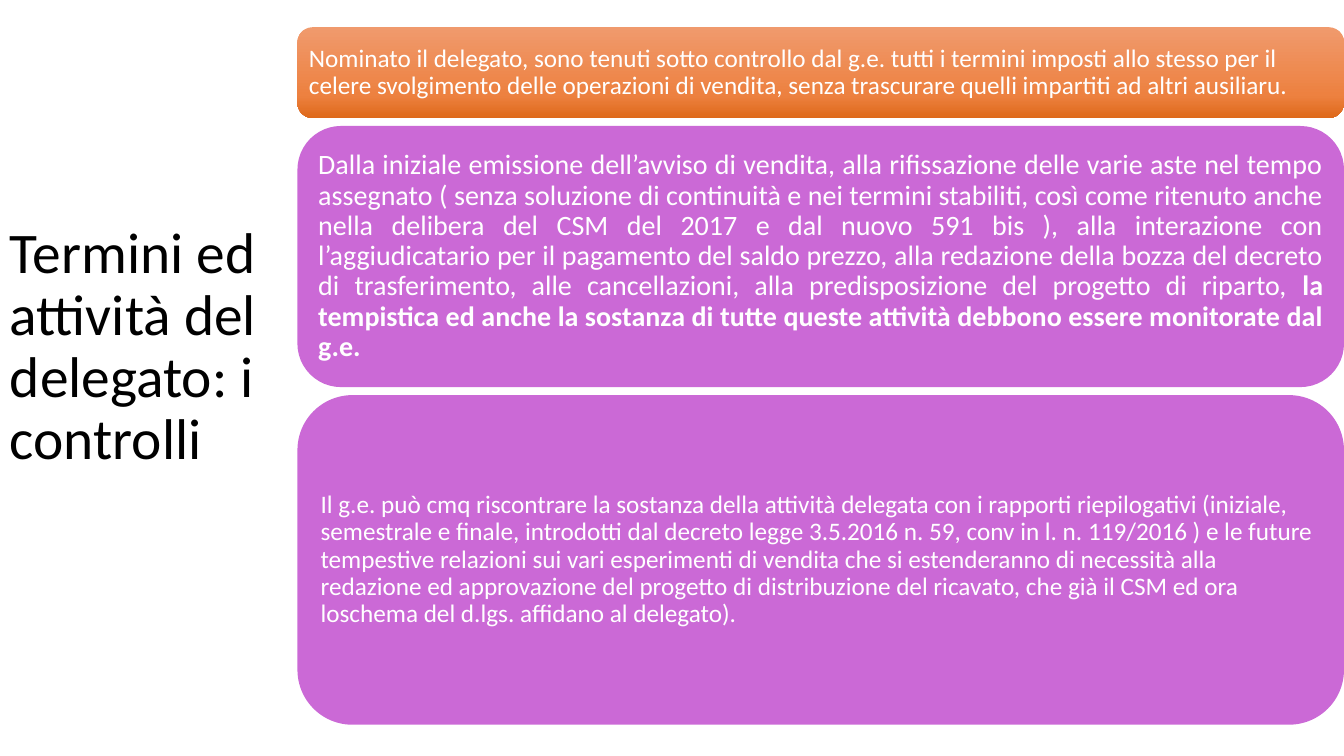
import copy
from dataclasses import dataclass
from typing import Optional

import pptx
import pptx.dml.color
import pptx.enum.shapes
import pptx.enum.text
import pptx.oxml.ns
import pptx.util

Inches = pptx.util.Inches
Align = pptx.enum.text.PP_ALIGN


@dataclass(frozen=True)
class Theme:
    """Colours and type sizes of the slide."""
    font: str = "Calibri"
    title_color: str = "000000"
    body_color: str = "FFFFFF"
    panel: str = "CB69D6"
    glow: tuple[tuple[float, str], ...] = ((0, "F09A6D"), (0.75, "ED8140"), (1, "DE691A"))
    title_size: float = 41
    small: float = 18
    large: float = 20


@dataclass(frozen=True)
class Passage:
    """A stretch of text in one weight."""
    text: str
    bold: bool = False


@dataclass(frozen=True)
class Panel:
    """A rounded panel; without a fill colour it takes the theme gradient."""
    height: float
    size: float
    passages: tuple[Passage, ...]
    inset: float = 0.07
    align: Align = Align.LEFT
    fill: Optional[str] = None


THEME = Theme()
SLIDE_WIDTH, SLIDE_HEIGHT = 13.33, 7.5
PANEL_LEFT, PANEL_TOP, PANEL_WIDTH, PANEL_GAP = 2.95, 0.27, 10.38, 0.08

TITLE = (Passage("Termini ed attività del delegato: i controlli"),)
PANELS = (
    Panel(0.9, THEME.small, (
        Passage("Nominato il delegato, sono tenuti sotto controllo dal g.e. tutti i termini "
                "imposti allo stesso per il celere svolgimento delle operazioni di vendita, "
                "senza trascurare quelli impartiti ad altri ausiliaru."),
    )),
    Panel(2.59, THEME.large, (
        Passage("Dalla iniziale emissione dell’avviso di vendita, alla rifissazione delle varie "
                "aste nel tempo assegnato ( senza soluzione di continuità e nei termini "
                "stabiliti, così come ritenuto anche nella delibera del CSM del 2017 e dal "
                "nuovo 591 bis ), alla interazione con l’aggiudicatario per il pagamento del "
                "saldo prezzo, alla redazione della bozza del decreto di trasferimento, alle "
                "cancellazioni, alla predisposizione del progetto di riparto, "),
        Passage("la tempistica ed anche la sostanza di tutte queste attività debbono essere "
                "monitorate dal g.e. ", bold=True),
    ), inset=0.08, align=Align.JUSTIFY, fill=THEME.panel),
    Panel(3.27, THEME.small, (
        Passage("Il g.e. può cmq riscontrare la sostanza della attività delegata con i rapporti "
                "riepilogativi (iniziale, semestrale e finale, introdotti dal decreto legge "
                "3.5.2016 n. 59, conv in l. n. 119/2016 ) e le future tempestive relazioni sui "
                "vari esperimenti di vendita che si estenderanno di necessità alla redazione ed "
                "approvazione del progetto di distribuzione del ricavato, che già il CSM ed ora "
                "loschema del d.lgs. affidano al delegato)."),
    ), fill=THEME.panel),
)


def rgb(value: str) -> pptx.dml.color.RGBColor:
    """Turn a hex string into a colour."""
    return pptx.dml.color.RGBColor.from_string(value)


def write(frame, passages: tuple[Passage, ...], size: float, color: str,
          align: Align = Align.LEFT) -> None:
    """Fill a text frame with one vertically centred paragraph."""
    frame.word_wrap = True
    frame.vertical_anchor = pptx.enum.text.MSO_ANCHOR.MIDDLE
    paragraph = frame.paragraphs[0]
    paragraph.alignment = align
    paragraph.line_spacing = 0.9
    for passage in passages:
        run = paragraph.add_run()
        run.text = passage.text
        run.font.name = THEME.font
        run.font.size = pptx.util.Pt(size)
        run.font.bold = passage.bold
        run.font.color.rgb = rgb(color)


def paint_glow(shape) -> None:
    """Apply the theme gradient from top to bottom."""
    shape.fill.gradient()
    shape.fill.gradient_angle = 270
    stop_list = shape.element.spPr.find(".//" + pptx.oxml.ns.qn("a:gsLst"))
    while len(stop_list) < len(THEME.glow):
        stop_list.append(copy.deepcopy(stop_list[0]))
    for stop, (position, color) in zip(shape.fill.gradient_stops, THEME.glow):
        stop.position = position
        stop.color.rgb = rgb(color)


def draw_panel(slide, panel: Panel, top: float) -> None:
    """Draw one rounded panel with its text."""
    shape = slide.shapes.add_shape(
        pptx.enum.shapes.MSO_SHAPE.ROUNDED_RECTANGLE,
        Inches(PANEL_LEFT), Inches(top), Inches(PANEL_WIDTH), Inches(panel.height))
    shape.shadow.inherit = False
    shape.line.fill.background()
    if panel.fill is None:
        paint_glow(shape)
    else:
        shape.fill.solid()
        shape.fill.fore_color.rgb = rgb(panel.fill)
    frame = shape.text_frame
    frame.margin_left = frame.margin_right = Inches(panel.inset)
    frame.margin_top = frame.margin_bottom = Inches(panel.inset)
    write(frame, panel.passages, panel.size, THEME.body_color, panel.align)


def main() -> None:
    """Build and save the slide."""
    deck = pptx.Presentation()
    deck.slide_width, deck.slide_height = Inches(SLIDE_WIDTH), Inches(SLIDE_HEIGHT)
    slide = deck.slides.add_slide(deck.slide_layouts[6])
    heading = slide.shapes.add_textbox(Inches(0), Inches(1.44), Inches(3.07), Inches(4.02))
    write(heading.text_frame, TITLE, THEME.title_size, THEME.title_color)
    top = PANEL_TOP
    for panel in PANELS:
        draw_panel(slide, panel, top)
        top += panel.height + PANEL_GAP
    deck.save("out.pptx")


if __name__ == "__main__":
    main()
